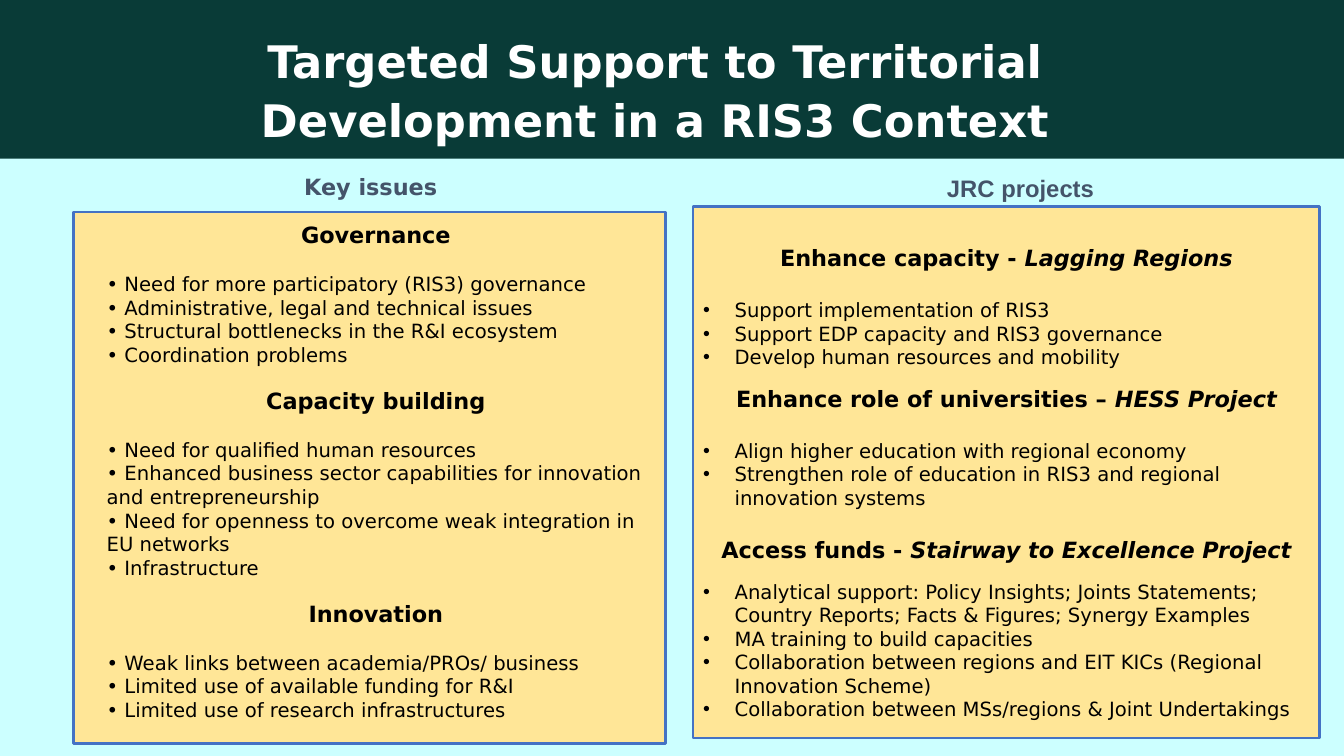
"""Build the slide on targeted support to territorial development."""
from lxml import etree
from pptx import Presentation
from pptx.dml.color import RGBColor
from pptx.enum.shapes import MSO_SHAPE as Shape
from pptx.enum.text import MSO_ANCHOR as Anchor, MSO_AUTO_SIZE as AutoSize, PP_ALIGN as Align
from pptx.oxml.ns import qn
from pptx.util import Pt

PX = 9525
BACKGROUND = RGBColor(0xCC, 0xFF, 0xFF)
BANNER = RGBColor(0x09, 0x3B, 0x37)
PANEL = RGBColor(0xFF, 0xE6, 0x97)
BORDER = RGBColor(0x44, 0x72, 0xC4)
SLATE = RGBColor(0x44, 0x54, 0x6A)
WHITE = RGBColor(0xFF, 0xFF, 0xFF)
BLACK = RGBColor(0x00, 0x00, 0x00)

KEY_ISSUES = [
    ("Governance", [
        "Need for more participatory (RIS3) governance",
        "Administrative, legal and technical issues",
        "Structural bottlenecks in the R&I ecosystem",
        "Coordination problems",
    ]),
    ("Capacity building", [
        "Need for qualified human resources",
        "Enhanced business sector capabilities for innovation and entrepreneurship",
        "Need for openness to overcome weak integration in EU networks",
        "Infrastructure",
    ]),
    ("Innovation", [
        "Weak links between academia/PROs/ business",
        "Limited use of available funding for R&I",
        "Limited use of research infrastructures",
    ]),
]
PROJECTS = [
    ("Enhance capacity - ", "Lagging Regions", 0, 19, [
        "Support implementation of RIS3",
        "Support EDP capacity and RIS3 governance",
        "Develop human resources and mobility",
    ]),
    ("Enhance role of universities – ", "HESS Project", 12, 19, [
        "Align higher education with regional economy",
        "Strengthen role of education in RIS3 and regional innovation systems",
    ]),
    ("Access funds - ", "Stairway to Excellence Project", 19, 12, [
        "Analytical support: Policy Insights; Joints Statements; "
        "Country Reports; Facts & Figures; Synergy Examples",
        "MA training to build capacities",
        "Collaboration between regions and EIT KICs (Regional Innovation Scheme)",
        "Collaboration between MSs/regions & Joint Undertakings",
    ]),
]


class SlideBuilder:
    """Holds the style and the current slide."""

    font = "DejaVu Sans"
    heading_size = 16
    item_size = 14
    hang = 30 * PX

    def __init__(self, slide):
        self.slide = slide
        self.backdrops = 0
        slide.background.fill.solid()
        slide.background.fill.fore_color.rgb = BACKGROUND

    def backdrop(self, box, fill, border=None):
        """Draw a rectangle behind the placeholders."""
        panel = self.slide.shapes.add_shape(Shape.RECTANGLE, *(n * PX for n in box))
        panel.shadow.inherit = False
        panel.fill.solid()
        panel.fill.fore_color.rgb = fill
        if border is None:
            panel.line.fill.background()
        else:
            panel.line.color.rgb = border
            panel.line.width = Pt(2)
        self.slide.shapes._spTree.insert(2 + self.backdrops, panel._element)
        self.backdrops += 1

    def frame(self, idx, box, inset=True):
        """Place a placeholder and return its text frame."""
        holder = self.slide.placeholders[idx]
        holder.left, holder.top, holder.width, holder.height = (n * PX for n in box)
        frame = holder.text_frame
        frame.word_wrap = True
        frame.auto_size = AutoSize.NONE
        frame.vertical_anchor = Anchor.TOP
        across, down = (Pt(7.2), Pt(3.6)) if inset else (0, 0)
        frame.margin_left = frame.margin_right = across
        frame.margin_top = frame.margin_bottom = down
        return frame

    def paragraph(self, frame, align, before=0, after=0, spacing=1.0, bullet=False):
        """Start a paragraph, reusing the empty first one."""
        first = frame.paragraphs[0]
        para = frame.add_paragraph() if first.runs else first
        props = para._p.get_or_add_pPr()
        props.set("marL", str(self.hang if bullet else 0))
        props.set("indent", str(-self.hang if bullet else 0))
        if bullet:
            etree.SubElement(props, qn("a:buFont"), typeface="Arial")
            etree.SubElement(props, qn("a:buChar"), char="•")
        else:
            etree.SubElement(props, qn("a:buNone"))
        para.alignment = align
        para.line_spacing = spacing
        para.space_before = Pt(before)
        para.space_after = Pt(after)
        return para

    def run(self, para, text, size, color=BLACK, bold=False, italic=False, font=None):
        """Add one formatted run."""
        run = para.add_run()
        run.text = text
        run.font.name = font or self.font
        run.font.size = Pt(size)
        run.font.bold = bold
        run.font.italic = italic
        run.font.color.rgb = color

    def title(self, idx, box, text, size, color, spacing, inset=False, font=None):
        """Fill a placeholder with one centred bold title."""
        para = self.paragraph(self.frame(idx, box, inset), Align.CENTER, spacing=spacing)
        self.run(para, text, size, color, bold=True, font=font)

    def heading(self, frame, text, before, after, project=None):
        """Add a group heading with an optional project name in italics."""
        para = self.paragraph(frame, Align.CENTER, before, after)
        self.run(para, text, self.heading_size, bold=True)
        if project:
            self.run(para, project, self.heading_size, bold=True, italic=True)

    def item(self, frame, text, bullet):
        """Add one list item."""
        para = self.paragraph(frame, Align.LEFT, bullet=bullet)
        self.run(para, text, self.item_size)


def main():
    deck = Presentation()
    deck.slide_width, deck.slide_height = 1280 * PX, 720 * PX
    comparison = deck.slide_layouts[4]
    builder = SlideBuilder(deck.slides.add_slide(comparison))

    builder.backdrop((0, 0, 1280, 151), BANNER)
    builder.backdrop((70, 202, 564, 506), PANEL, BORDER)
    builder.backdrop((660, 197, 597, 506), PANEL, BORDER)

    builder.title(0, (112, 27, 1024, 68),
                  "Targeted Support to Territorial Development in a RIS3 Context",
                  32, WHITE, 1.1)
    builder.title(1, (126, 163, 454, 68), "Key issues", 16, SLATE, 0.9, inset=True)
    builder.title(3, (745, 163, 454, 68), "JRC projects", 17, SLATE, 1.1, font="Arial")

    issues = builder.frame(2, (92, 206, 532, 488))
    for position, (topic, needs) in enumerate(KEY_ISSUES):
        builder.heading(issues, topic, 15 if position else 0, 17)
        for need in needs:
            builder.item(issues, f"• {need}", bullet=False)

    projects = builder.frame(4, (660, 228, 597, 465))
    for aim, project, before, after, actions in PROJECTS:
        builder.heading(projects, aim, before, after, project)
        for action in actions:
            builder.item(projects, action, bullet=True)

    deck.save("out.pptx")


if __name__ == "__main__":
    main()
